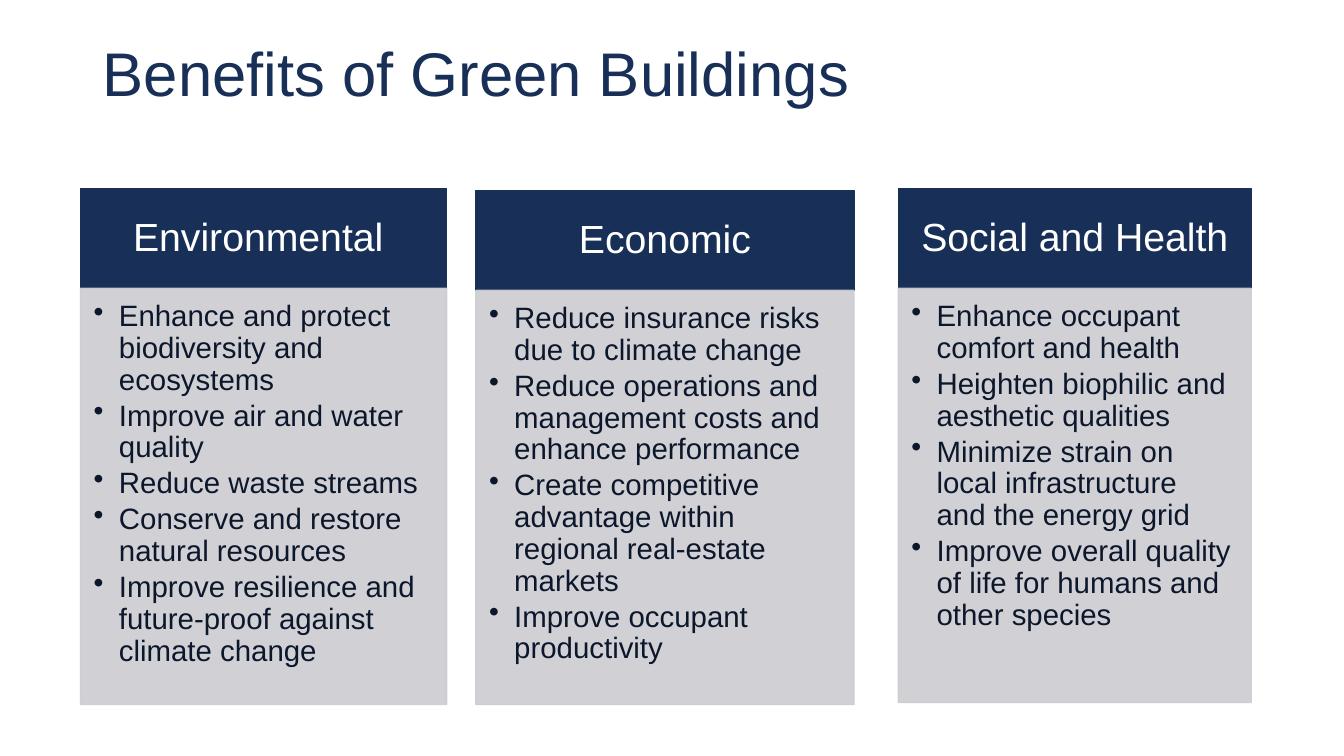
"""Build a slide that lists the benefits of green buildings in three columns."""
from lxml import etree
from pptx import Presentation, util as u
from pptx.dml.color import RGBColor
from pptx.enum import shapes, text
from pptx.oxml.ns import qn

NAVY, GREY, INK, WHITE = "182F58", "CCCDD1", "0C172C", "FFFFFF"
HEADER_HEIGHT = 0.99
HEADER_INSETS = {"margin_left": 0.18, "margin_top": 0.1, "margin_right": 0.18, "margin_bottom": 0.1}
BODY_INSETS = {"margin_left": 0.13, "margin_top": 0.13, "margin_right": 0.18, "margin_bottom": 0.2}
COLUMNS = [
    (0.8, 1.87, 3.63, 4.13, "Environmental ", [
        "Enhance and protect biodiversity and ecosystems",
        "Improve air and water quality",
        "Reduce waste streams",
        "Conserve and restore natural resources",
        "Improve resilience and future-proof against climate change"]),
    (4.72, 1.89, 3.75, 4.11, "Economic", [
        "Reduce insurance risks due to climate change",
        "Reduce operations and management costs and enhance performance",
        "Create competitive advantage within regional real-estate markets",
        "Improve occupant productivity"]),
    (8.91, 1.87, 3.5, 4.11, "Social and Health", [
        "Enhance occupant comfort and health",
        "Heighten biophilic and aesthetic qualities",
        "Minimize strain on local infrastructure and the energy grid",
        "Improve overall quality of life for humans and other species"]),
]


def style_font(font, size, colour):
    font.name, font.size = "Arial", u.Pt(size)
    font.color.rgb = RGBColor.from_string(colour)


def add_panel(page, bounds, colour, insets, anchor):
    panel = page.shapes.add_shape(shapes.MSO_SHAPE.RECTANGLE, *map(u.Inches, bounds))
    panel.shadow.inherit = False
    panel.line.width = u.Pt(1)
    for fill in (panel.fill, panel.line.fill):
        fill.solid()
        fill.fore_color.rgb = RGBColor.from_string(colour)
    frame = panel.text_frame
    frame.word_wrap, frame.vertical_anchor = True, anchor
    for name, value in insets.items():
        setattr(frame, name, u.Inches(value))
    return panel


deck = Presentation()
deck.slide_width, deck.slide_height = u.Inches(13.33), u.Inches(7.5)
page = deck.slides.add_slide(deck.slide_layouts[5])

title = page.shapes.title
title.left, title.top, title.width, title.height = map(u.Inches, (0.92, 0.03, 11.5, 1.45))
title.text_frame.text = "Benefits of Green Buildings"
title.text_frame.vertical_anchor = text.MSO_ANCHOR.MIDDLE
heading = title.text_frame.paragraphs[0]
heading.alignment, heading.line_spacing = text.PP_ALIGN.LEFT, 0.9
style_font(heading.font, 44, NAVY)

for left, top, width, body_height, label, benefits in COLUMNS:
    header = add_panel(page, (left, top, width, HEADER_HEIGHT), NAVY,
                       HEADER_INSETS, text.MSO_ANCHOR.MIDDLE)
    para = header.text_frame.paragraphs[0]
    para.text = label
    para.alignment, para.line_spacing = text.PP_ALIGN.CENTER, 0.9
    style_font(para.font, 28, WHITE)

    body = add_panel(page, (left, top + HEADER_HEIGHT, width, body_height), GREY,
                     BODY_INSETS, text.MSO_ANCHOR.TOP)
    for colour in body._element.spPr.iter(qn("a:srgbClr")):
        etree.SubElement(colour, qn("a:alpha"), val="90000")
    frame = body.text_frame
    for index, benefit in enumerate(benefits):
        para = frame.add_paragraph() if index else frame.paragraphs[0]
        para.text, para.level = benefit, 1
        properties = para._p.get_or_add_pPr()
        properties.set("marL", str(u.Inches(0.25)))
        properties.set("indent", str(u.Inches(-0.25)))
        etree.SubElement(properties, qn("a:buChar"), char="•")
        para.alignment, para.line_spacing = text.PP_ALIGN.LEFT, 0.9
        para.space_after = u.Pt(3)
        style_font(para.font, 21, INK)

deck.save("out.pptx")
